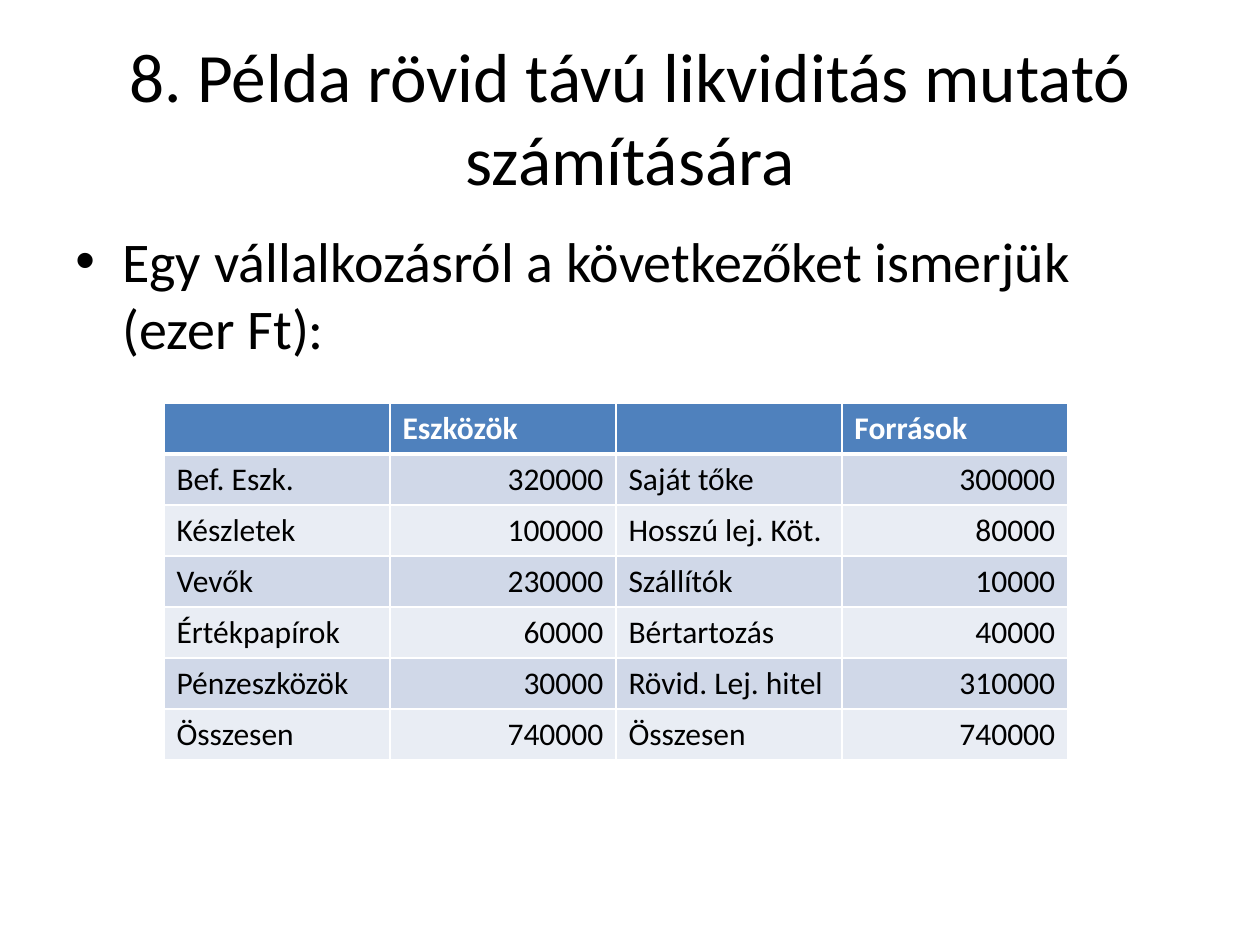
from lxml import etree
from pptx import Presentation
from pptx.dml.color import RGBColor
from pptx.enum.text import MSO_ANCHOR, PP_ALIGN
from pptx.oxml.ns import qn
from pptx.util import Pt

# Content
TITLE = "8. Példa rövid távú likviditás mutató számítására"
INTRO = "Egy vállalkozásról a következőket ismerjük (ezer Ft):"
BALANCE_SHEET = [
    ("", "Eszközök", "", "Források"),
    ("Bef. Eszk.", "320000", "Saját tőke", "300000"),
    ("Készletek", "100000", "Hosszú lej. Köt.", "80000"),
    ("Vevők", "230000", "Szállítók", "10000"),
    ("Értékpapírok", "60000", "Bértartozás", "40000"),
    ("Pénzeszközök", "30000", "Rövid. Lej. hitel", "310000"),
    ("Összesen", "740000", "Összesen", "740000"),
]

# Layout in px, 126 to the inch
PX = 914400 // 126
SLIDE_SIZE = (1260, 945)
TITLE_BOX = (63, 38, 1134, 157)
INTRO_BOX = (63, 220, 1134, 624)
BULLET_INDENT = 47
TABLE_LEFT, TABLE_TOP = 164, 403
COLUMN_WIDTH, ROW_HEIGHT = 226, 51

BLACK, WHITE = "000000", "FFFFFF"
HEADER_FILL = "4F81BD"
BAND_FILLS = ("E9EDF4", "D0D8E8")
TITLE_FORMAT = {"size": Pt(39.6), "name": "Calibri"}
INTRO_FORMAT = {"size": Pt(32), "name": "Calibri"}
HEADER_FORMAT = {"size": Pt(18), "name": "Calibri", "bold": True}
BODY_FORMAT = {"size": Pt(18), "name": "Calibri", "bold": False}


def color(value):
    return RGBColor.from_string(value)


def set_text(paragraph, text, formats, text_color, alignment):
    paragraph.alignment = alignment
    if not text:
        return
    run = paragraph.add_run()
    run.text = text
    for name, value in formats.items():
        setattr(run.font, name, value)
    run.font.color.rgb = color(text_color)


def add_text(slide, box, text, formats, alignment, anchor):
    shape = slide.shapes.add_textbox(*(value * PX for value in box))
    frame = shape.text_frame
    frame.word_wrap = True
    frame.vertical_anchor = anchor
    paragraph = frame.paragraphs[0]
    set_text(paragraph, text, formats, BLACK, alignment)
    return paragraph


def add_bullet(paragraph):
    properties = paragraph._p.get_or_add_pPr()
    properties.set("marL", str(BULLET_INDENT * PX))
    properties.set("indent", str(-BULLET_INDENT * PX))
    etree.SubElement(properties, qn("a:buFont"), typeface="Arial")
    etree.SubElement(properties, qn("a:buChar"), char="•")


def set_borders(cell, bottom_width, top_width):
    properties = cell._tc.get_or_add_tcPr()
    widths = {"lnL": 1, "lnR": 1, "lnT": top_width, "lnB": bottom_width}
    # Borders come before the fill in the cell properties
    for position, (side, width) in enumerate(widths.items()):
        line = etree.Element(qn(f"a:{side}"), w=str(Pt(width)))
        fill = etree.SubElement(line, qn("a:solidFill"))
        etree.SubElement(fill, qn("a:srgbClr"), val=WHITE)
        properties.insert(position, line)


def add_balance_sheet(slide):
    row_count, column_count = len(BALANCE_SHEET), len(BALANCE_SHEET[0])
    table = slide.shapes.add_table(
        row_count, column_count, TABLE_LEFT * PX, TABLE_TOP * PX,
        column_count * COLUMN_WIDTH * PX, row_count * ROW_HEIGHT * PX).table
    for column in table.columns:
        column.width = COLUMN_WIDTH * PX
    for row in table.rows:
        row.height = ROW_HEIGHT * PX

    for row_index, values in enumerate(BALANCE_SHEET):
        header = row_index == 0
        for column_index, text in enumerate(values):
            cell = table.cell(row_index, column_index)
            cell.fill.solid()
            cell.fill.fore_color.rgb = color(
                HEADER_FILL if header else BAND_FILLS[row_index % 2])
            set_borders(cell, 3 if header else 1, 3 if row_index == 1 else 1)
            amount = not header and column_index % 2 == 1
            set_text(cell.text_frame.paragraphs[0], text,
                     HEADER_FORMAT if header else BODY_FORMAT,
                     WHITE if header else BLACK,
                     PP_ALIGN.RIGHT if amount else PP_ALIGN.LEFT)


def main():
    presentation = Presentation()
    presentation.slide_width, presentation.slide_height = (
        value * PX for value in SLIDE_SIZE)
    slide = presentation.slides.add_slide(presentation.slide_layouts[6])

    # Title and introduction
    add_text(slide, TITLE_BOX, TITLE, TITLE_FORMAT,
             PP_ALIGN.CENTER, MSO_ANCHOR.MIDDLE)
    intro = add_text(slide, INTRO_BOX, INTRO, INTRO_FORMAT,
                     PP_ALIGN.LEFT, MSO_ANCHOR.TOP)
    add_bullet(intro)

    # Assets and liabilities
    add_balance_sheet(slide)
    presentation.save("out.pptx")


if __name__ == "__main__":
    main()
